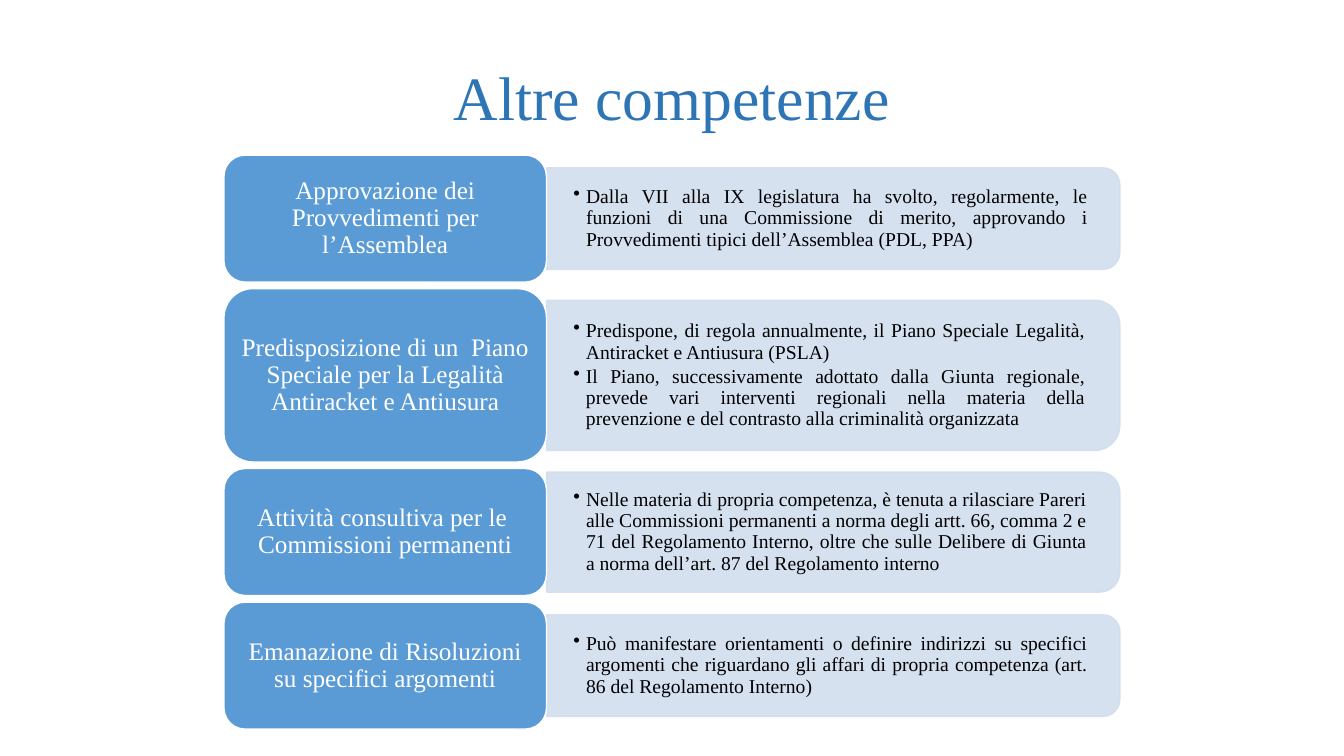
from lxml import etree
from pptx import Presentation
from pptx.dml.color import RGBColor
from pptx.enum.shapes import MSO_SHAPE
from pptx.enum.text import MSO_ANCHOR, PP_ALIGN
from pptx.oxml.ns import qn
from pptx.util import Pt

TITLE_BLUE = RGBColor(0x2E, 0x75, 0xB6)
TOPIC_BLUE = RGBColor(0x5B, 0x9B, 0xD5)
DETAIL_BLUE = RGBColor(0xD2, 0xDE, 0xEF)
WHITE = RGBColor(0xFF, 0xFF, 0xFF)
BLACK = RGBColor(0, 0, 0)

ROUNDED = MSO_SHAPE.ROUNDED_RECTANGLE
TWO_ROUNDED = MSO_SHAPE.ROUND_2_SAME_RECTANGLE
MIDDLE, BOTTOM = MSO_ANCHOR.MIDDLE, MSO_ANCHOR.BOTTOM
CENTER, JUSTIFY = PP_ALIGN.CENTER, PP_ALIGN.JUSTIFY

# Row layout in points
TOPIC_LEFT, TOPIC_W = 160, 230.4
DETAIL_LEFT, DETAIL_W = TOPIC_LEFT + TOPIC_W, 409.5
FIRST_TOP, ROW_GAP = 110.8, 4.7
CORNER_INSET = 0.0488  # share of the height that a rounded corner takes from the text

# Topic, topic height, detail height, details
ROWS = [
    ("Approvazione dei Provvedimenti per l’Assemblea", 90.7, 72.6,
     ["Dalla VII alla IX legislatura ha svolto, regolarmente, le funzioni di una "
      "Commissione di merito, approvando i Provvedimenti tipici dell’Assemblea (PDL, PPA)"]),
    ("Predisposizione di un  Piano Speciale per la Legalità Antiracket e Antiusura", 123.8, 107.3,
     ["Predispone, di regola annualmente, il Piano Speciale Legalità, "
      "Antiracket e Antiusura (PSLA)",
      "Il Piano, successivamente adottato dalla Giunta regionale, prevede vari interventi "
      "regionali nella materia della prevenzione e del contrasto alla criminalità organizzata"]),
    ("Attività consultiva per le  Commissioni permanenti", 90.7, 85.7,
     ["Nelle materia di propria competenza, è tenuta a rilasciare Pareri alle Commissioni "
      "permanenti a norma degli artt. 66, comma 2 e 71 del Regolamento Interno, oltre che "
      "sulle Delibere di Giunta a norma dell’art. 87 del Regolamento interno"]),
    ("Emanazione di Risoluzioni su specifici argomenti", 90.7, 72.6,
     ["Può manifestare orientamenti o definire indirizzi su specifici argomenti che "
      "riguardano gli affari di propria competenza (art. 86 del Regolamento Interno)"]),
]


def write(shape, texts, size, color, align, anchor, inset_x, inset_y):
    frame = shape.text_frame
    frame.word_wrap = True
    frame.vertical_anchor = anchor
    frame.margin_left = frame.margin_right = Pt(inset_x)
    frame.margin_top = frame.margin_bottom = Pt(inset_y)
    for i, text in enumerate(texts):
        paragraph = frame.add_paragraph() if i else frame.paragraphs[0]
        paragraph.alignment = align
        paragraph.line_spacing = 0.9
        run = paragraph.add_run()
        run.text = text
        run.font.name = "Times New Roman"
        run.font.size = Pt(size)
        run.font.color.rgb = color
    return frame


def add_panel(preset, left, top, width, height, fill, line):
    panel = slide.shapes.add_shape(preset, Pt(left), Pt(top), Pt(width), Pt(height))
    panel.shadow.inherit = False
    panel.fill.solid()
    panel.fill.fore_color.rgb = fill
    panel.line.color.rgb = line
    panel.line.width = Pt(1)
    return panel


prs = Presentation()
prs.slide_width, prs.slide_height = Pt(960), Pt(540)
slide = prs.slides.add_slide(prs.slide_layouts[6])

# Title
title = slide.shapes.add_textbox(Pt(120), Pt(44.6), Pt(720), Pt(54.7))
write(title, ["Altre competenze"], 44, TITLE_BLUE, CENTER, BOTTOM, 7.2, 3.6)

top = FIRST_TOP
for topic, topic_h, detail_h, details in ROWS:
    middle = top + topic_h / 2

    # Detail panel, turned so that its rounded corners face right
    panel = add_panel(TWO_ROUNDED, DETAIL_LEFT + (DETAIL_W - detail_h) / 2,
                      middle - DETAIL_W / 2, detail_h, DETAIL_W, DETAIL_BLUE, DETAIL_BLUE)
    panel.rotation = 90
    for color in panel.element.spPr.iter(qn("a:srgbClr")):
        etree.SubElement(color, qn("a:alpha"), val="90000")

    # Detail bullets
    inset = CORNER_INSET * detail_h
    detail = slide.shapes.add_textbox(Pt(DETAIL_LEFT), Pt(middle - detail_h / 2 + inset),
                                      Pt(DETAIL_W - inset), Pt(detail_h - 2 * inset))
    frame = write(detail, details, 14, BLACK, JUSTIFY, MIDDLE, 19.2, 9.9)
    for paragraph in frame.paragraphs:
        paragraph.level = 1
        paragraph.space_after = Pt(2)
        properties = paragraph._p.get_or_add_pPr()
        properties.set("marL", str(Pt(9)))
        properties.set("indent", str(-Pt(9)))
        etree.SubElement(properties, qn("a:buChar"), char="•")

    # Topic box
    box = add_panel(ROUNDED, TOPIC_LEFT, top, TOPIC_W, topic_h, TOPIC_BLUE, WHITE)
    write(box, [topic], 18, WHITE, CENTER, MIDDLE, 5.4, 2.7)

    top += topic_h + ROW_GAP

prs.save("out.pptx")
